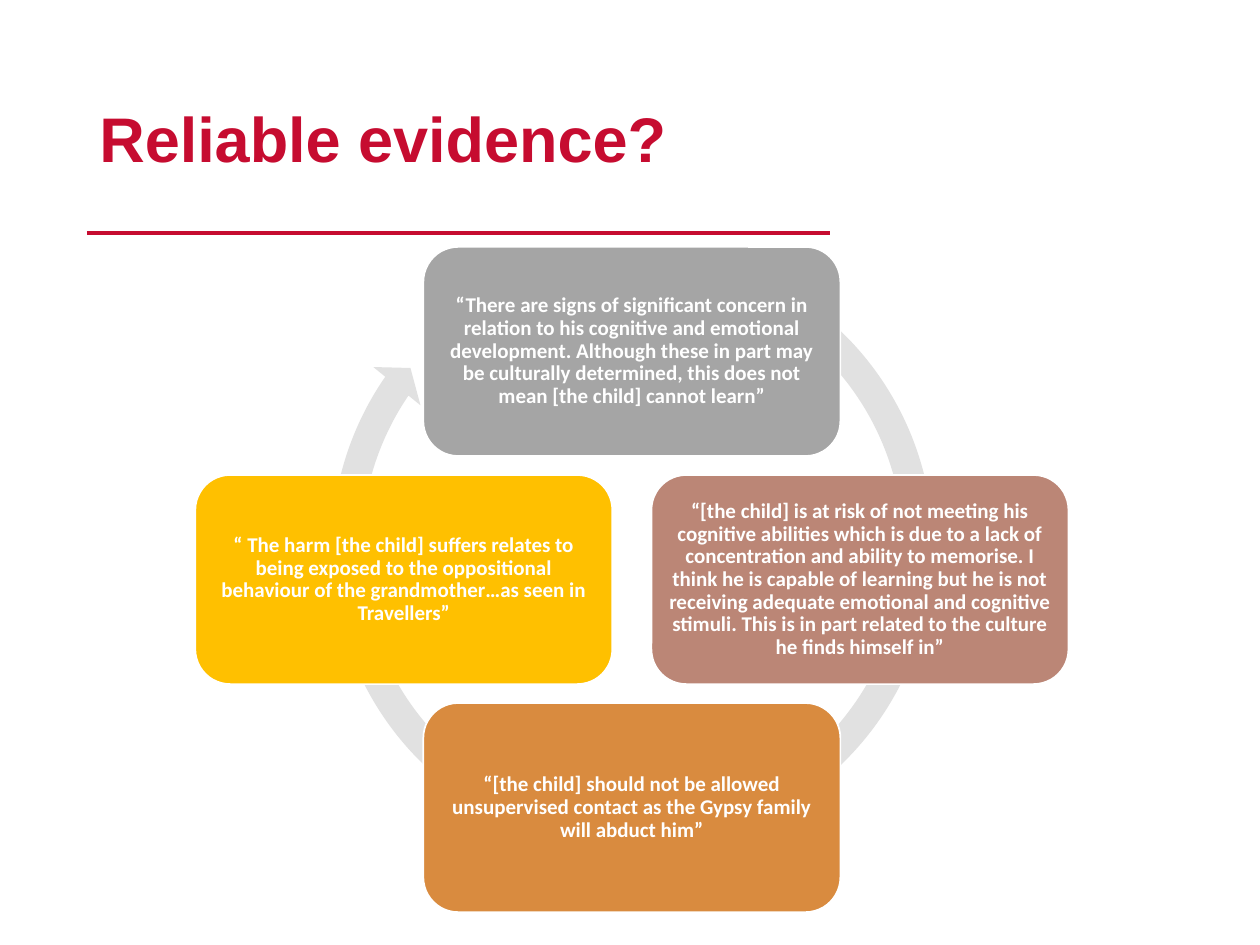
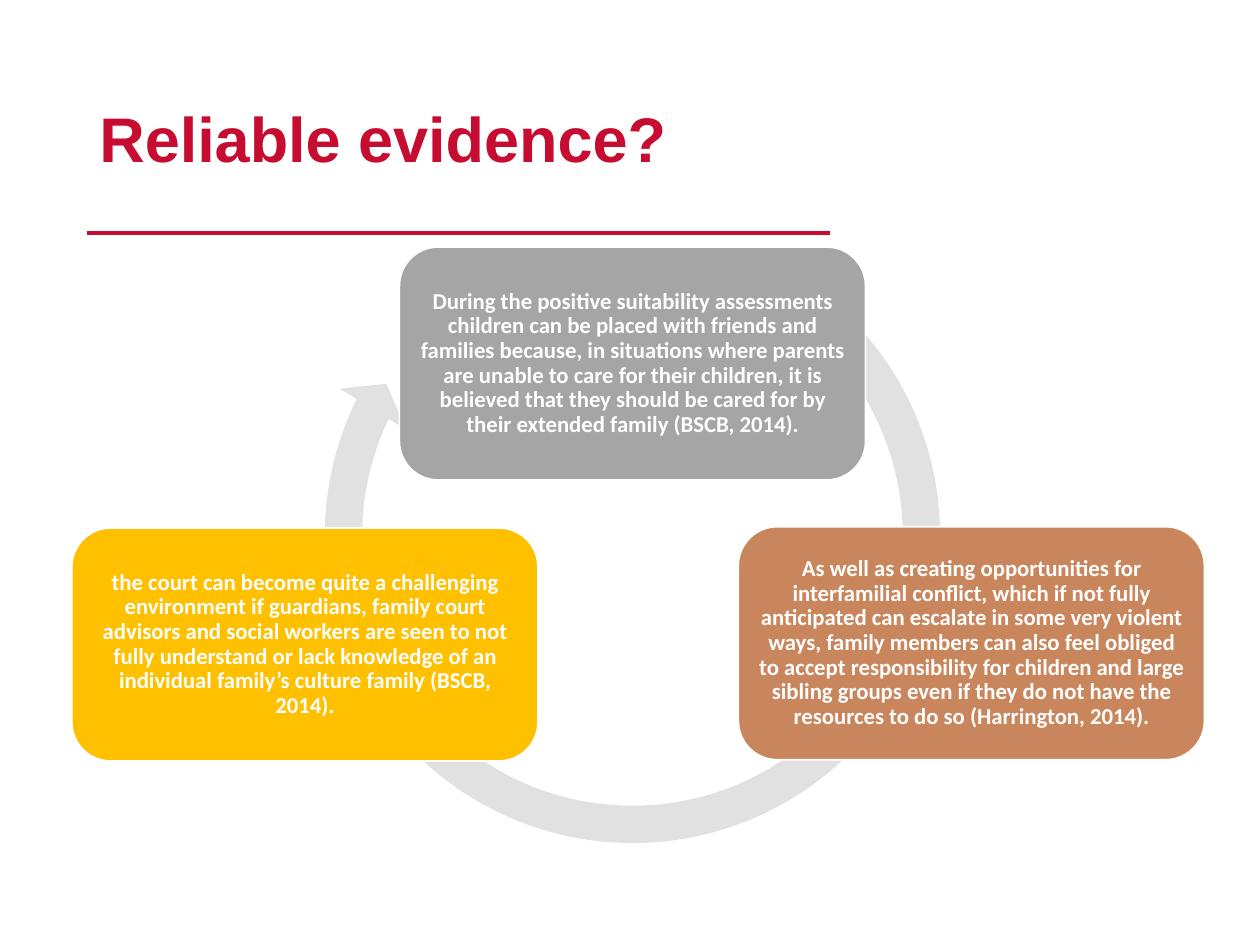
from dataclasses import dataclass

from lxml import etree
from pptx import Presentation
from pptx import util as u
from pptx.dml.color import RGBColor
from pptx.enum import shapes, text
from pptx.oxml.ns import qn

EMU_PER_PX = 9144  # 100 px to the inch
COLORS = {
    "crimson": "C60C30",
    "ring": "E1E1E1",
    "grey": "A5A5A5",
    "rose": "BB8676",
    "orange": "D98B3F",
    "copper": "C9855C",
    "amber": "FFC000",
    "white": "FFFFFF",
}
TITLE = "Reliable evidence?"
STEP = 181  # shift between neighbouring cards of the four-card cycle


@dataclass
class Card:
    quote: str
    color: str
    dx: int = 0  # shift from the top card
    dy: int = 0


@dataclass
class Cycle:
    ring: tuple[int, int, int]  # left, top, diameter
    bend: tuple[float, ...]  # circular arrow adjustments
    top_card: tuple[int, int, int, int]  # left, top, width, height
    size: int
    cards: list[Card]


CYCLES = [
    Cycle((251, 184, 502), (0.047, 2.729, 128.702, 180.045, 0.048), (336, 196, 331, 166), 12, [
        Card("“There are signs of significant concern in relation to his cognitive and "
             "emotional development. Although these in part may be culturally determined, "
             "this does not mean [the child] cannot learn”", "grey"),
        Card("“[the child] is at risk of not meeting his cognitive abilities which is due to "
             "a lack of concentration and ability to memorise. I think he is capable of "
             "learning but he is not receiving adequate emotional and cognitive stimuli. "
             "This is in part related to the culture he finds himself in”",
             "rose", STEP, STEP),
        Card("“[the child] should not be allowed unsupervised contact as the Gypsy family "
             "will abduct him”", "orange", 0, 2 * STEP),
        Card("“ The harm [the child] suffers relates to being exposed to the oppositional "
             "behaviour of the grandmother…as seen in Travellers”", "amber", -STEP, STEP),
    ]),
    Cycle((242, 165, 520), (0.057, 3.405, 123.583, 183.153, 0.059), (317, 196, 370, 185), 13, [
        Card("During the positive suitability assessments children can be placed with friends "
             "and families because, in situations where parents are unable to care for their "
             "children, it is believed that they should be cared for by their extended family "
             "(BSCB, 2014).", "grey"),
        Card("As well as creating opportunities for interfamilial conflict, which if not fully "
             "anticipated can escalate in some very violent ways, family members can also feel "
             "obliged to accept responsibility for children and large sibling groups even if "
             "they do not have the resources to do so (Harrington, 2014).",
             "copper", 269, 222),
        Card("the court can become quite a challenging environment if guardians, family court "
             "advisors and social workers are seen to not fully understand or lack knowledge "
             "of an individual family’s culture family (BSCB, 2014).",
             "amber", -260, 223),
    ]),
]


def px(n: int) -> u.Emu:
    return u.Emu(n * EMU_PER_PX)


def rgb(name: str) -> RGBColor:
    return RGBColor.from_string(COLORS[name])


def write(sp, words: str, font: str, size: int, color: str, align) -> None:
    tf = sp.text_frame
    tf.word_wrap = True
    tf.vertical_anchor = text.MSO_ANCHOR.MIDDLE
    p = tf.paragraphs[0]
    p.text = words
    p.alignment = align
    p.line_spacing = 0.9
    f = p.runs[0].font
    f.name, f.size, f.bold = font, u.Pt(size), True
    f.color.rgb = rgb(color)


def add_filled(s, kind, box: tuple[int, int, int, int], color: str):
    sp = s.shapes.add_shape(kind, *map(px, box))
    sp.shadow.inherit = False
    sp.fill.solid()
    sp.fill.fore_color.rgb = rgb(color)
    return sp


def add_heading(s) -> None:
    rule = s.shapes.add_connector(shapes.MSO_CONNECTOR.STRAIGHT, px(69), px(185), px(659), px(185))
    rule.line.color.rgb = rgb("crimson")
    rule.line.width = u.Pt(2.25)
    etree.SubElement(rule._element.spPr, qn("a:effectLst"))
    title = s.shapes.add_textbox(px(69), px(40), px(726), px(145))
    write(title, TITLE, "Arial", 36, "crimson", text.PP_ALIGN.LEFT)


def add_cycle(s, cycle: Cycle) -> None:
    # Ring arrow behind the cards
    left, top, diameter = cycle.ring
    ring = add_filled(s, shapes.MSO_SHAPE.CIRCULAR_ARROW, (left, top, diameter, diameter), "ring")
    ring.line.fill.background()
    for i, value in enumerate(cycle.bend):
        ring.adjustments[i] = value

    # Quote cards
    left, top, width, height = cycle.top_card
    for card in cycle.cards:
        box = (left + card.dx, top + card.dy, width, height)
        sp = add_filled(s, shapes.MSO_SHAPE.ROUNDED_RECTANGLE, box, card.color)
        sp.line.color.rgb = rgb("white")
        sp.line.width = u.Pt(1)
        tf = sp.text_frame
        tf.margin_left = tf.margin_right = tf.margin_top = tf.margin_bottom = px(5)
        write(sp, card.quote, "Calibri", cycle.size, "white", text.PP_ALIGN.CENTER)


def main() -> None:
    prs = Presentation()
    prs.slide_width, prs.slide_height = px(1000), px(750)
    for cycle in CYCLES:
        s = prs.slides.add_slide(prs.slide_layouts[6])
        add_heading(s)
        add_cycle(s, cycle)
    prs.save("out.pptx")


if __name__ == "__main__":
    main()
